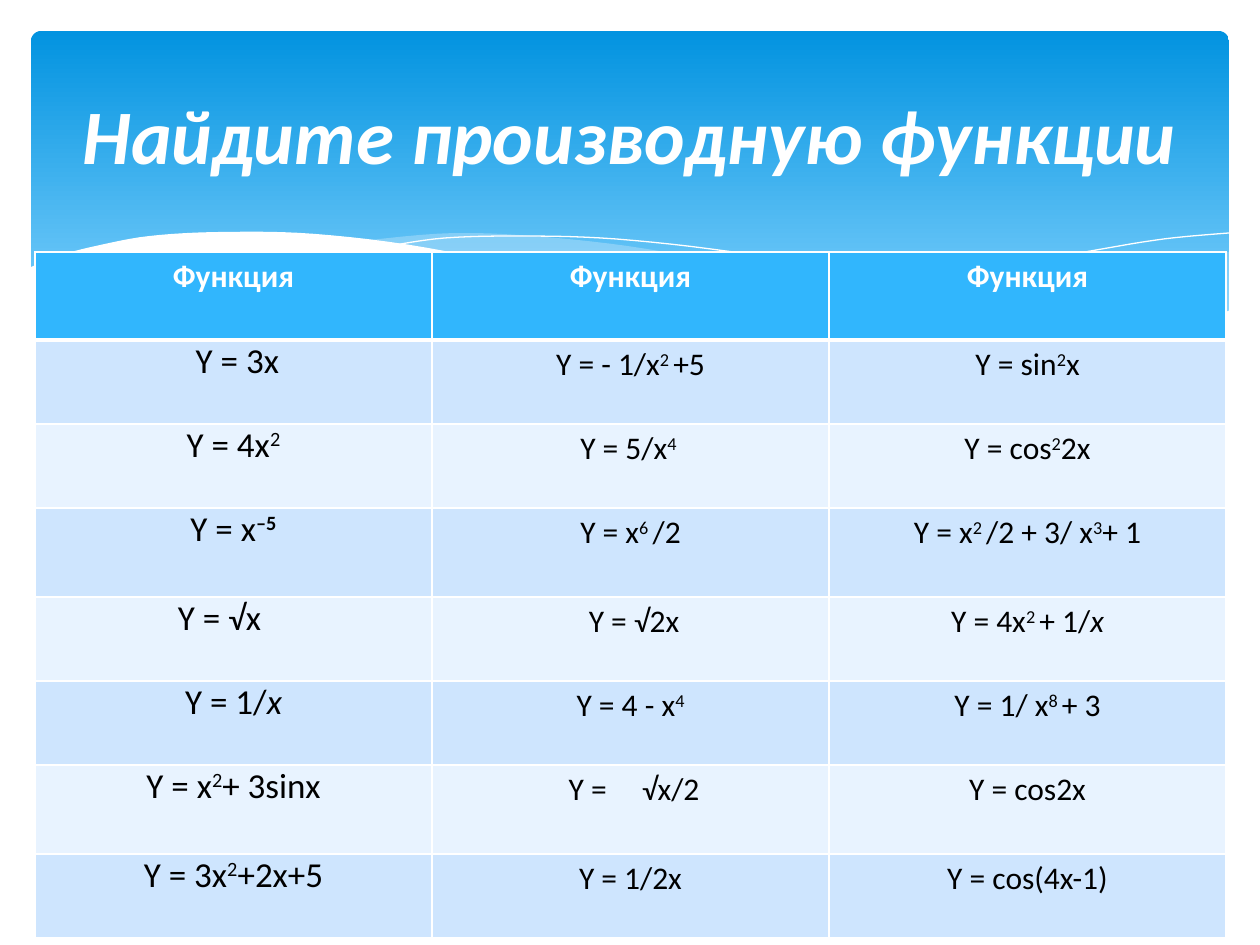
from itertools import groupby

from lxml import etree
from pptx import Presentation
from pptx import util as u
from pptx.dml.color import RGBColor
from pptx.enum import shapes, text
from pptx.oxml.ns import qn

SCALE = 914400 / 126  # EMU per px
COLORS = {
    "sky": "0293E0", "haze": "83D3FE", "wave": "C6E7FC", "white": "FFFFFF",
    "header": "31B6FD", "odd": "CEE5FE", "even": "E8F3FF", "black": "000000",
}
# Marks that switch a style on and off inside a formula
MARKS = {"^": "superscript", "~": "bold", "*": "italic"}


def px(length):
    return u.Emu(round(length * SCALE))


def smooth(knots, steps=6):
    """Points of a Catmull-Rom curve through the knots."""
    padded = [knots[0], *knots, knots[-1]]
    points = [knots[0]]
    for a, b, c, d in zip(padded, padded[1:], padded[2:], padded[3:]):
        for step in range(1, steps + 1):
            t = step / steps
            points.append(tuple(
                (2 * q + (r - p) * t + (2 * p - 5 * q + 4 * r - s) * t ** 2
                 + (3 * q - p - 3 * r + s) * t ** 3) / 2
                for p, q, r, s in zip(a, b, c, d)))
    return points


class SlideBuilder:
    font = "Calibri"

    def __init__(self, slide):
        self.slide = slide

    def color(self, name):
        return RGBColor.from_string(COLORS[name])

    def banner(self, x, y, width, height):
        shape = self.slide.shapes.add_shape(
            shapes.MSO_SHAPE.ROUNDED_RECTANGLE, px(x), px(y), px(width), px(height))
        shape.shadow.inherit = False
        shape.adjustments[0] = 0.03
        shape.fill.gradient()
        shape.fill.gradient_angle = 270
        stops = zip(shape.fill.gradient_stops, ("sky", "haze"), (0, 0.9))
        for stop, name, position in stops:
            stop.color.rgb = self.color(name)
            stop.position = position
        shape.line.fill.background()

    def outline(self, points, closed):
        points = [(px(x), px(y)) for x, y in points]
        builder = self.slide.shapes.build_freeform(*points[0], scale=1.0)
        builder.add_line_segments(points[1:], close=closed)
        shape = builder.convert_to_shape()
        shape.shadow.inherit = False
        return shape

    def wave(self, points, name, opacity=100):
        shape = self.outline(points, True)
        shape.fill.solid()
        shape.fill.fore_color.rgb = self.color(name)
        shape.line.fill.background()
        if opacity < 100:
            color = next(shape.element.spPr.iter(qn("a:srgbClr")))
            etree.SubElement(color, qn("a:alpha"), val=str(opacity * 1000))

    def curve(self, knots):
        shape = self.outline(smooth(knots), False)
        shape.fill.background()
        shape.line.color.rgb = self.color("white")
        shape.line.width = u.Pt(0)

    def add_runs(self, paragraph, source, size, name, **base):
        """Add the runs of a marked-up line."""
        active = set()
        for is_mark, group in groupby(source, key=lambda sign: sign in MARKS):
            if is_mark:
                active ^= {MARKS[sign] for sign in group}
                continue
            run = paragraph.add_run()
            run.text = "".join(group)
            run.font.name = self.font
            run.font.size = u.Pt(size)
            run.font.color.rgb = self.color(name)
            run.font.bold = base.get("bold", "bold" in active)
            run.font.italic = base.get("italic", "italic" in active)
            if "superscript" in active:
                run._r.get_or_add_rPr().set("baseline", "30000")

    def title(self, source, x, y, width, height):
        frame = self.slide.shapes.add_textbox(px(x), px(y), px(width), px(height)).text_frame
        frame.word_wrap = True
        frame.vertical_anchor = text.MSO_ANCHOR.MIDDLE
        paragraph = frame.paragraphs[0]
        paragraph.alignment = text.PP_ALIGN.CENTER
        self.add_runs(paragraph, source, 44, "white", bold=True, italic=True)

    def borders(self, cell, top, bottom):
        properties = cell._tc.get_or_add_tcPr()
        widths = {"a:lnL": 1, "a:lnR": 1, "a:lnT": top, "a:lnB": bottom}
        for index, (tag, width) in enumerate(widths.items()):
            line = etree.Element(qn(tag), w=str(u.Pt(width)))
            fill = etree.SubElement(line, qn("a:solidFill"))
            etree.SubElement(fill, qn("a:srgbClr"), val=COLORS["white"])
            properties.insert(index, line)

    def cell(self, cell, source, row, column):
        large = row > 0 and column == 0
        cell.margin_left = cell.margin_right = px(9 if large else 12)
        cell.margin_top = cell.margin_bottom = px(0 if large else 6)
        cell.fill.solid()
        band = "header" if row == 0 else "odd" if row % 2 else "even"
        cell.fill.fore_color.rgb = self.color(band)
        self.borders(cell, 3 if row == 1 else 1, 3 if row == 0 else 1)
        paragraph = cell.text_frame.paragraphs[0]
        paragraph.alignment = text.PP_ALIGN.CENTER
        if row == 0:
            self.add_runs(paragraph, source, 18, "white", bold=True)
        else:
            self.add_runs(paragraph, source, 20 if large else 18, "black")

    def table(self, rows, x, y, column_width, heights):
        columns = len(rows[0])
        table = self.slide.shapes.add_table(
            len(rows), columns, px(x), px(y),
            px(column_width * columns), px(sum(heights))).table
        for column in table.columns:
            column.width = px(column_width)
        for row, (sources, height) in enumerate(zip(rows, heights)):
            table.rows[row].height = px(height)
            for column, source in enumerate(sources):
                self.cell(table.cell(row, column), source, row, column)
        return table


FUNCTIONS = [
    ["Функция"] * 3,
    [" Y = 3x", "Y = - 1/x^2 ^+5", "Y = sin^2^x"],
    ["Y = 4x^2", "Y = 5/x^4 ", "Y = cos^2^2x"],
    ["Y = x^~–5", "Y = x^6 ^/2", "Y = x^2 ^/2 + 3/ x^3^+ 1"],
    ["Y = √х", " Y = √2х", "Y = 4x^2 ^+ 1/*х"],
    ["Y = 1/*х", "Y = 4 - x^4", "Y = 1/ x^8 ^+ 3"],
    ["Y = x^2^+ 3sinx", " Y = " + "√х/2", "Y = cos2x"],
    ["Y = 3x^2^+2x+5", "Y = 1/2x", "Y = cos(4x-1)"],
]


def main():
    presentation = Presentation()
    presentation.slide_width, presentation.slide_height = px(1260), px(945)
    builder = SlideBuilder(presentation.slides.add_slide(presentation.slide_layouts[6]))

    # Blue banner with its waves
    builder.banner(31, 31, 1198, 340)
    builder.wave(
        smooth([(1229, 252), (1085, 281), (949, 312), (833, 334)])
        + smooth([(833, 334), (906, 343), (1026, 350), (1130, 340), (1229, 311)]),
        "wave", 29)
    builder.wave(
        smooth([(1125, 344), (1017, 328), (890, 302), (793, 280), (665, 252),
                (557, 238), (455, 233), (360, 241)])
        + smooth([(360, 241), (456, 256), (566, 280), (713, 312), (857, 338),
                  (1017, 350), (1125, 344)]),
        "wave", 40)
    builder.curve([(389, 246), (445, 238), (524, 236), (616, 239), (733, 252),
                   (876, 276), (1002, 304), (1143, 343)])
    builder.curve([(772, 324), (876, 296), (978, 272), (1091, 251), (1164, 239), (1229, 233)])
    builder.wave(
        smooth([(1231, 310), (1159, 334), (1071, 347), (980, 348), (867, 338),
                (730, 315), (563, 277), (428, 248), (315, 234), (223, 232),
                (150, 236), (96, 246), (58, 256), (29, 268)])
        + [(29, 415), (1231, 415)],
        "white")

    # Table of functions
    table = builder.table(FUNCTIONS, 35, 252, 397, [88, 84, 84, 89, 84, 84, 89, 84])

    # The first root is indented from the left
    root = table.cell(4, 0).text_frame.paragraphs[0]
    root.alignment = text.PP_ALIGN.LEFT
    root._p.get_or_add_pPr().set("marL", str(px(134)))

    # The gap before the second root is widened by letter spacing
    gap_run = table.cell(6, 1).text_frame.paragraphs[0].runs[0]
    gap_run.text = " Y ="
    root_run = table.cell(6, 1).text_frame.paragraphs[0]
    builder.add_runs(root_run, " ", 18, "black")
    root_run.runs[-1]._r.get_or_add_rPr().set("spc", "1600")
    builder.add_runs(root_run, "√х/2", 18, "black")

    # Title
    builder.title("Найдите производную функции", 63, 47, 1134, 173)

    presentation.save("out.pptx")


if __name__ == "__main__":
    main()
